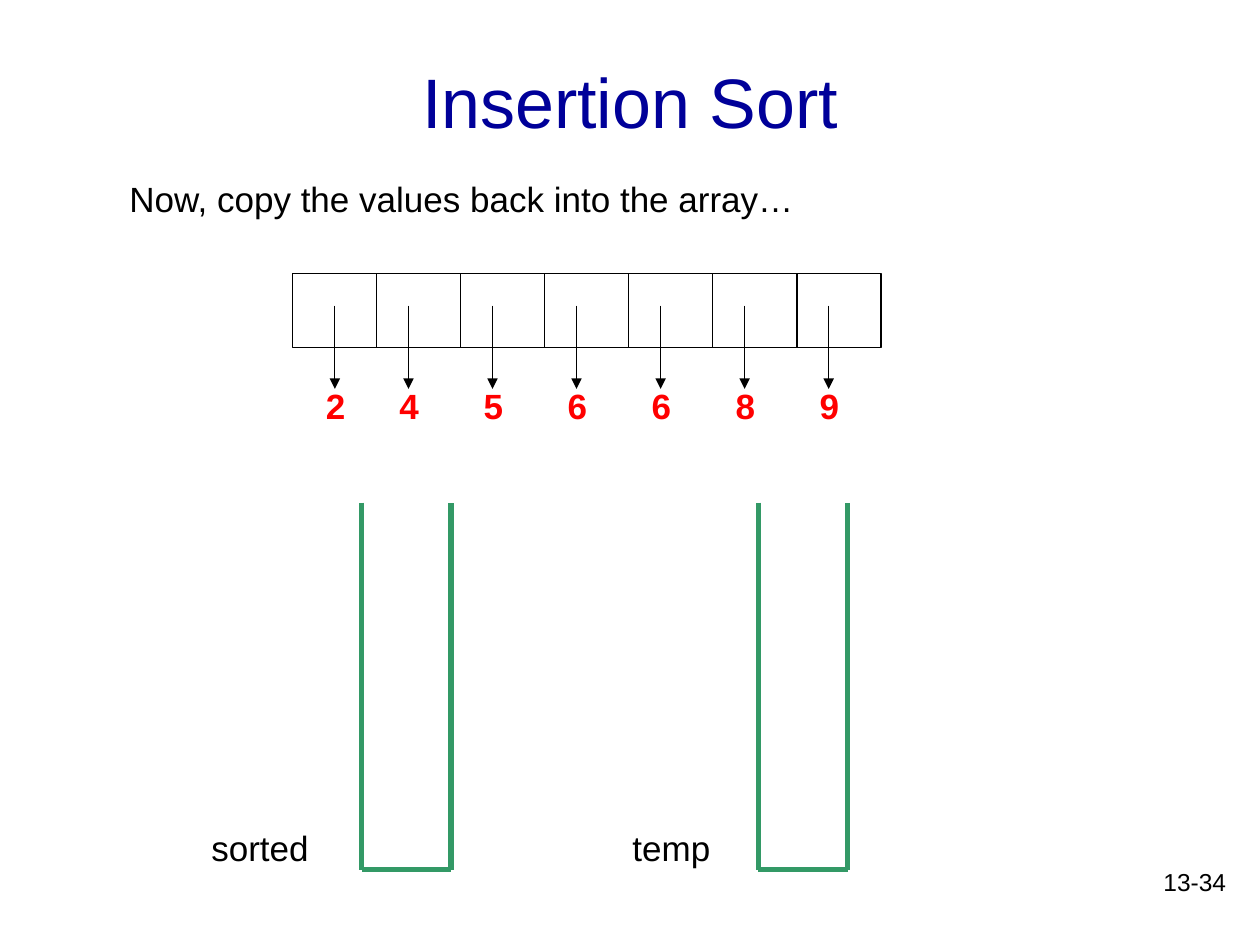
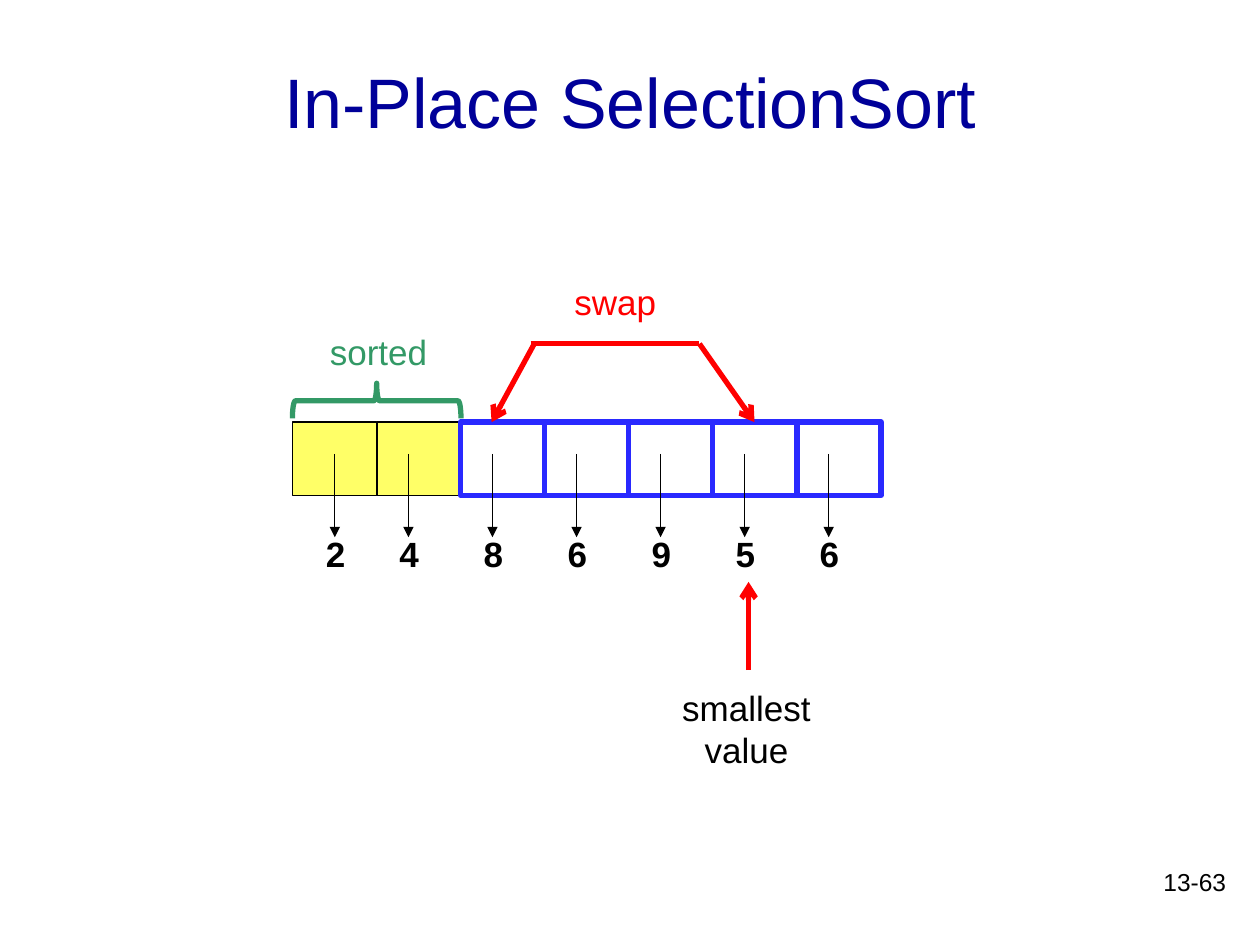
from lxml import etree
from pptx import Presentation
from pptx import util as u
from pptx.dml import color
from pptx.enum import shapes, text
from pptx.oxml import ns

# Shared look; all lengths in cm
FONT = "Arial"
BLACK, NAVY, RED, GREEN = "000000", "000099", "FF0000", "339966"
YELLOW, BLUE = "FFFF67", "2929FF"
ROW_LEFT, ROW_WIDTH, CELL_HEIGHT = 5.9, 11.86, 1.48
CELLS = 7
CELL_WIDTH = ROW_WIDTH / CELLS


def rgb(hex_color):
    return color.RGBColor.from_string(hex_color)


def box(left, top, width, height):
    return [u.Cm(length) for length in (left, top, width, height)]


def write(frame, lines, size, hex_color, bold=False, align=text.PP_ALIGN.LEFT):
    font_format = {"name": FONT, "size": u.Pt(size), "bold": bold}
    frame.text = lines
    for paragraph in frame.paragraphs:
        paragraph.alignment = align
        for key, value in font_format.items():
            setattr(paragraph.font, key, value)
        paragraph.font.color.rgb = rgb(hex_color)


def label(slide, place, lines, hex_color=BLACK, size=20, wrap=False, **style):
    frame = slide.shapes.add_textbox(*box(*place)).text_frame
    frame.word_wrap = wrap
    write(frame, lines, size, hex_color, **style)


def outline(slide, kind, place, hex_color, weight, fill=None):
    shape = slide.shapes.add_shape(kind, *box(*place))
    shape.shadow.inherit = False
    shape.line.color.rgb = rgb(hex_color)
    shape.line.width = u.Pt(weight)
    if fill:
        shape.fill.solid()
        shape.fill.fore_color.rgb = rgb(fill)
    else:
        shape.fill.background()
    return shape


def line(slide, start, end, hex_color, weight, head=None):
    stroke = slide.shapes.add_connector(
        shapes.MSO_CONNECTOR.STRAIGHT, *box(*start, *end))
    stroke.line.color.rgb = rgb(hex_color)
    stroke.line.width = u.Pt(weight)
    if head:
        tail = etree.SubElement(stroke.line._get_or_add_ln(), ns.qn("a:tailEnd"))
        tail.set("type", head)
    etree.SubElement(stroke._element.spPr, ns.qn("a:effectLst"))


def start_slide(deck, heading, number):
    slide = deck.slides.add_slide(deck.slide_layouts[5])
    title = slide.shapes.title
    placing = dict(zip(("left", "top", "width", "height"),
                       box(1.9, 0.43, 21.6, 3.18)))
    for key, value in placing.items():
        setattr(title, key, value)
    title.text_frame.vertical_anchor = text.MSO_ANCHOR.MIDDLE
    write(title.text_frame, heading, 40, NAVY, align=text.PP_ALIGN.CENTER)
    label(slide, (19.69, 17.35, 5.28, 1.27), number, size=14, wrap=True,
          align=text.PP_ALIGN.RIGHT)
    return slide


def array_row(slide, top, values, value_color, cell_styles):
    """Cells of an array, each with an arrow to the value it refers to."""
    for i, style in enumerate(cell_styles):
        outline(slide, shapes.MSO_SHAPE.RECTANGLE,
                (ROW_LEFT + i * CELL_WIDTH, top, CELL_WIDTH, CELL_HEIGHT), *style)
    for i, value in enumerate(values):
        # The first arrow is centred, the others sit left of centre
        x = ROW_LEFT + i * CELL_WIDTH + (0.64 if i else 0.85)
        label(slide, (x - 0.43, top + 2.11, 1.07, 1.09), value, value_color,
              wrap=True, bold=True)
        line(slide, (x, top + 0.64), (x, top + 2.32), BLACK, 0.75, "triangle")


def queue(slide, left, name, name_place):
    """A container that is open at the top, with its name beside it."""
    top, right, bottom = 10.13, left + 1.8, 17.53
    corners = [(left, top), (left, bottom), (right, bottom), (right, top)]
    for start, end in zip(corners, corners[1:]):
        line(slide, start, end, GREEN, 3)
    label(slide, name_place, name)


def insertion_slide(deck):
    slide = start_slide(deck, "Insertion Sort", "13-34")
    array_row(slide, 5.52, "2456689", RED, [(BLACK, 0.75)] * CELLS)
    queue(slide, 7.29, "sorted", (4.01, 16.54, 2.49, 1.12))
    queue(slide, 15.29, "temp", (12.5, 16.54, 2.08, 1.12))
    label(slide, (2.36, 3.45, 14, 1.12),
          "Now, copy the values back into the array…")


def selection_slide(deck):
    slide = start_slide(deck, "In-Place SelectionSort", "13-63")
    array_row(slide, 8.51, "2486956", BLACK,
              [(BLACK, 0.75, YELLOW), (BLACK, 1, YELLOW)] + [(BLUE, 3)] * 5)

    # Sorted part
    brace = outline(slide, shapes.MSO_SHAPE.RIGHT_BRACE,
                    (7.24, 6.38, 0.71, 3.4), GREEN, 3)
    brace.rotation = 270
    label(slide, (6.4, 6.53, 2.49, 1.12), "sorted", GREEN)

    # Smallest value
    line(slide, (15.09, 13.51), (15.09, 11.73), RED, 3, "arrow")
    label(slide, (13.49, 13.72, 3.12, 1.96), "smallest\nvalue",
          align=text.PP_ALIGN.CENTER)

    # Swap
    line(slide, (10.77, 6.93), (9.91, 8.51), RED, 3, "arrow")
    line(slide, (10.7, 6.93), (14.1, 6.93), RED, 3)
    line(slide, (14.1, 6.93), (15.21, 8.51), RED, 3, "arrow")
    label(slide, (11.33, 5.54, 2.18, 1.12), "swap", RED)


def main():
    deck = Presentation()
    deck.slide_width, deck.slide_height = u.Cm(25.4), u.Cm(19.05)
    insertion_slide(deck)
    selection_slide(deck)
    deck.save("out.pptx")


if __name__ == "__main__":
    main()
